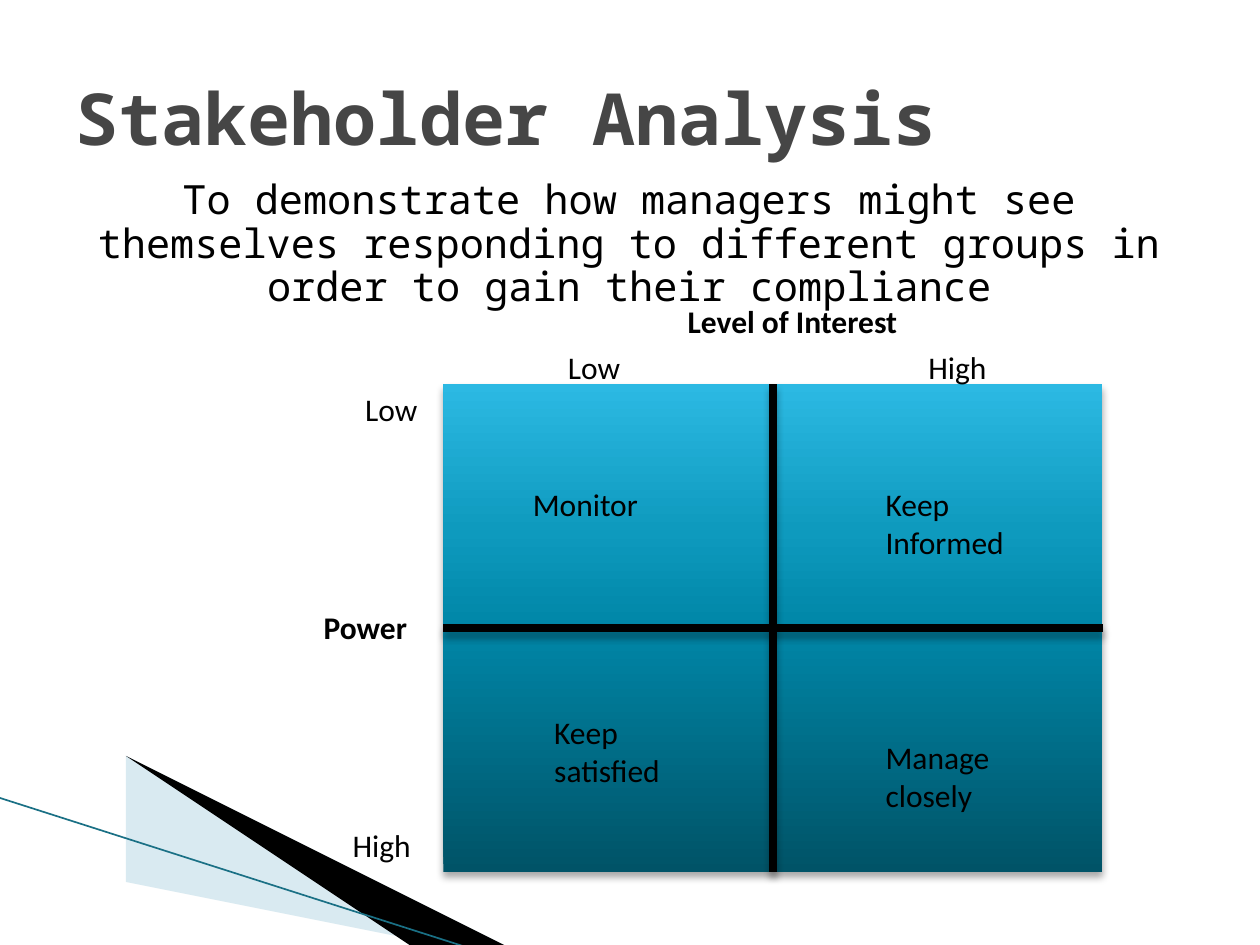
from lxml import etree
from pptx import Presentation
from pptx.dml.color import RGBColor
from pptx.enum.shapes import MSO_CONNECTOR, MSO_SHAPE
from pptx.enum.text import MSO_ANCHOR, MSO_AUTO_SIZE, PP_ALIGN
from pptx.oxml import parse_xml
from pptx.oxml.ns import nsdecls, qn
from pptx.util import Inches, Pt

COLORS = {
    "title": "464646",
    "text": "000000",
    "pale": "A0CBDC",
    "edge": "1A7085",
    "black": "000000",
}
MATRIX_GRADIENT = [(0, "005367"), (50, "0086A7"), (70, "0E9ABE"), (100, "2CB9E3")]
HEADING_FONT = "Noto Sans Mono"
LABEL_FONT = "Calibri"


def rgb(name):
    return RGBColor.from_string(COLORS[name])


def set_font(paragraph, face, size, color="text", bold=False):
    font = paragraph.font
    font.name, font.size, font.bold = face, Pt(size), bold
    font.color.rgb = rgb(color)


def add_effects(shape, shadow=False):
    """Give the shape a soft downward shadow, or none at all."""
    outer = (
        '<a:outerShdw blurRad="50800" dist="38100" dir="5400000" rotWithShape="0">'
        '<a:srgbClr val="000000"><a:alpha val="35000"/></a:srgbClr></a:outerShdw>'
    )
    shape._element.spPr.append(parse_xml(
        f'<a:effectLst {nsdecls("a")}>{outer if shadow else ""}</a:effectLst>'))


def add_line(slide, start, end, color, width, shadow=False):
    line = slide.shapes.add_connector(
        MSO_CONNECTOR.STRAIGHT, *(Inches(v) for v in (*start, *end)))
    line.line.color.rgb = rgb(color)
    line.line.width = Pt(width)
    add_effects(line, shadow)


def add_wedge(slide, points, color, opacity=None):
    builder = slide.shapes.build_freeform(*points[0], scale=Inches(1))
    builder.add_line_segments(points[1:], close=True)
    wedge = builder.convert_to_shape()
    wedge.shadow.inherit = False
    wedge.line.fill.background()
    wedge.fill.solid()
    wedge.fill.fore_color.rgb = rgb(color)
    if opacity is not None:
        fill_color = wedge._element.spPr.find(qn("a:solidFill"))[0]
        etree.SubElement(fill_color, qn("a:alpha")).set("val", str(opacity * 1000))


def add_corner(slide, left, top):
    """Sweeping wedges in the bottom left corner."""
    def place(points):
        return [(left + x, top + y) for x, y in points]

    add_wedge(slide, place([(0.55, 0.18), (5.95, 1.18), (4.56, 1.18), (0.55, 0.17)]),
              "pale", opacity=40)
    add_wedge(slide, place([(0.53, 0.16), (4.57, 1.18), (3.72, 1.19), (0.54, 0.17)]),
              "black")
    add_line(slide, *place([(-0.01, 0), (3.71, 1.19)]), "edge", 0.95)


def add_title(slide, left, top, width, height):
    title = slide.shapes.title
    title.left, title.top = Inches(left), Inches(top)
    title.width, title.height = Inches(width), Inches(height)
    frame = title.text_frame
    frame.text = "Stakeholder Analysis"
    frame.vertical_anchor = MSO_ANCHOR.MIDDLE
    frame.paragraphs[0].alignment = PP_ALIGN.LEFT
    set_font(frame.paragraphs[0], HEADING_FONT, 41, "title", bold=True)


def add_text(slide, text, left, top, width, height):
    box = slide.shapes.add_textbox(
        Inches(left), Inches(top), Inches(width), Inches(height))
    box.text_frame.word_wrap = True
    box.text_frame.text = text
    return box.text_frame


def add_purpose(slide, left, top, width, height):
    frame = add_text(
        slide,
        "To demonstrate how managers might see themselves responding to "
        "different groups in order to gain their compliance",
        left, top, width, height)
    purpose = frame.paragraphs[0]
    purpose.alignment = PP_ALIGN.CENTER
    purpose.line_spacing = 0.9
    set_font(purpose, HEADING_FONT, 23)


def add_label(slide, text, left, top, width, height=0.4, bold=False):
    frame = add_text(slide, text, left, top, width, height)
    frame.auto_size = MSO_AUTO_SIZE.SHAPE_TO_FIT_TEXT
    set_font(frame.paragraphs[0], LABEL_FONT, 18, bold=bold)


def add_matrix(slide, left, top, width, height):
    """Power and interest grid with its axis labels."""
    # Gradient field
    field = slide.shapes.add_shape(
        MSO_SHAPE.RECTANGLE, Inches(left), Inches(top), Inches(width), Inches(height))
    field.line.fill.background()
    stops = "".join(
        f'<a:gs pos="{position * 1000}"><a:srgbClr val="{color}"/></a:gs>'
        for position, color in MATRIX_GRADIENT)
    field._element.spPr.find(qn("a:prstGeom")).addnext(parse_xml(
        f'<a:gradFill {nsdecls("a")} rotWithShape="1"><a:gsLst>{stops}</a:gsLst>'
        '<a:lin ang="16200000" scaled="0"/></a:gradFill>'))
    add_effects(field, shadow=True)

    # Dividers
    right, bottom = left + width, top + height
    center, middle = left + width / 2, top + height / 2
    add_line(slide, (center, top), (center, bottom), "black", 4.33, shadow=True)
    add_line(slide, (left, middle), (right, middle), "black", 4.33, shadow=True)

    # Axis labels: text, offset from the grid corner, width
    for text, x, y, label_width, bold in [
        ("Low", 0.89, -0.34, 1.37, False),
        ("High", 3.75, -0.34, 0.73, False),
        ("Low", -0.72, 0, 0.73, False),
        ("High", -0.82, 3.46, 0.82, False),
        ("Level of Interest", 1.84, -0.7, 2.26, True),
        ("Power", -1.05, 1.73, 0.91, True),
    ]:
        add_label(slide, text, left + x, top + y, label_width, bold=bold)

    # Quadrant strategies: text, offset from the grid corner, height
    for text, x, y, label_height in [
        ("Monitor", 0.61, 0.75, 0.4),
        ("Keep Informed", 3.41, 0.75, 0.7),
        ("Keep satisfied", 0.78, 2.56, 0.7),
        ("Manage closely", 3.41, 2.76, 0.7),
    ]:
        add_label(slide, text, left + x, top + y, 1.38, label_height)


def main():
    deck = Presentation()
    deck.slide_width, deck.slide_height = Inches(10), Inches(7.5)
    slide = deck.slides.add_slide(deck.slide_layouts[5])
    add_corner(slide, 0, 6.33)
    add_title(slide, 0.5, 0.3, 9, 1.25)
    add_purpose(slide, 0.5, 1.38, 9, 1.4)
    add_matrix(slide, 3.52, 3.05, 5.23, 3.87)
    deck.save("out.pptx")


if __name__ == "__main__":
    main()
